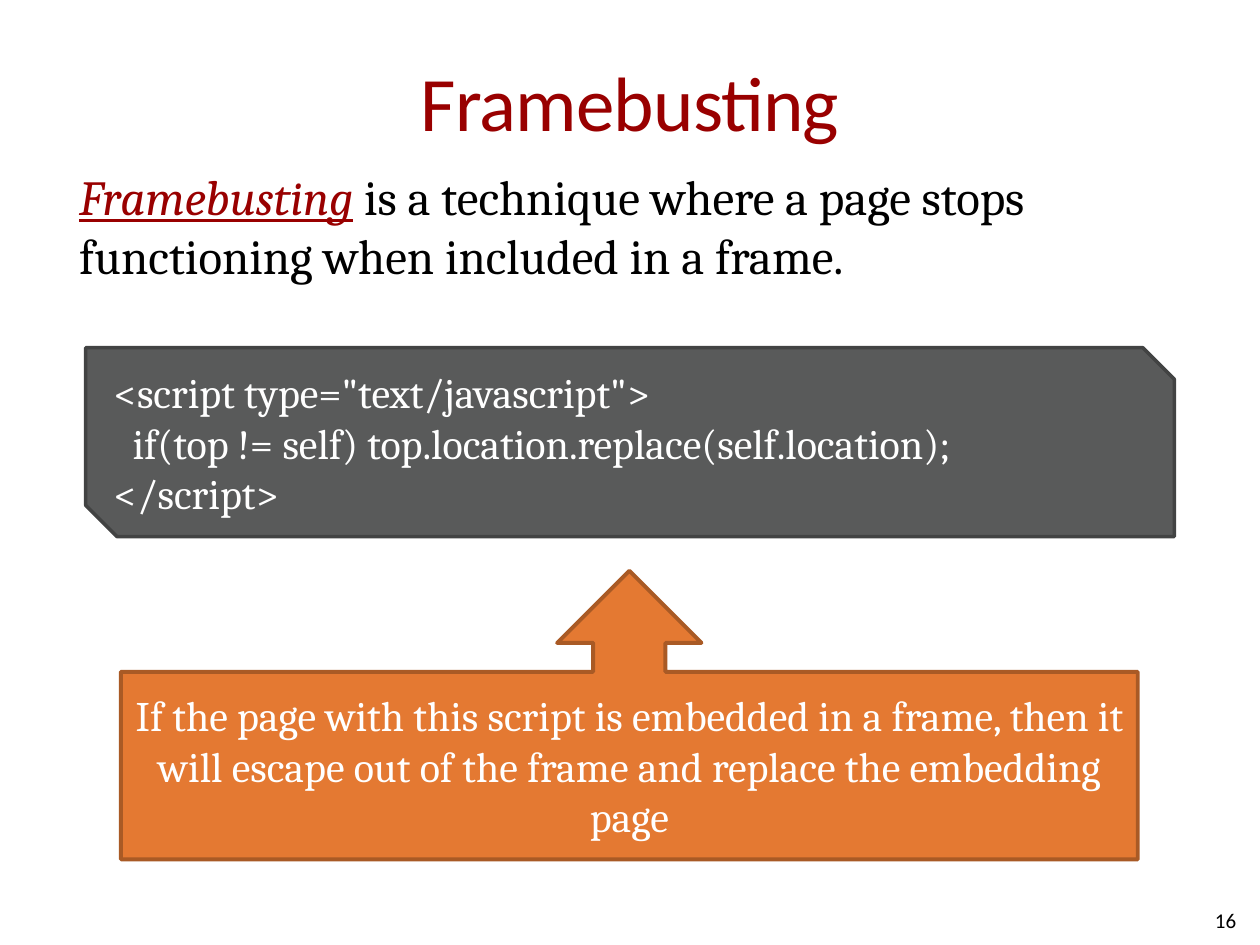
from dataclasses import dataclass

from pptx import Presentation
from pptx.dml.color import RGBColor
from pptx.enum import shapes, text
from pptx.util import Inches, Pt

CRIMSON = RGBColor(0x99, 0x00, 0x00)
BLACK = RGBColor(0x00, 0x00, 0x00)
WHITE = RGBColor(0xFF, 0xFF, 0xFF)
GRAY = RGBColor(0x59, 0x5A, 0x5A)
DARK_GRAY = RGBColor(0x42, 0x43, 0x43)
ORANGE = RGBColor(0xE4, 0x79, 0x32)
DARK_ORANGE = RGBColor(0xA9, 0x5A, 0x25)

LEFT, CENTER, RIGHT = text.PP_ALIGN.LEFT, text.PP_ALIGN.CENTER, text.PP_ALIGN.RIGHT
MIDDLE, TOP = text.MSO_ANCHOR.MIDDLE, text.MSO_ANCHOR.TOP


@dataclass(frozen=True)
class Style:
    font: str
    size: float
    color: RGBColor
    align: text.PP_ALIGN = LEFT


@dataclass(frozen=True)
class Area:
    left: float
    top: float
    width: float
    height: float

    def lengths(self) -> list:
        return [Inches(n) for n in (self.left, self.top, self.width, self.height)]


@dataclass(frozen=True)
class Panel:
    preset: shapes.MSO_SHAPE
    area: Area
    fill: RGBColor
    line: RGBColor
    line_width: float
    style: Style
    lines: tuple[str, ...]
    wrap: bool = True


def write_lines(frame, lines: tuple[str, ...], style: Style) -> None:
    for index, line in enumerate(lines):
        para = frame.paragraphs[0] if index == 0 else frame.add_paragraph()
        para.text = line
        para.alignment = style.align
        para.font.name = style.font
        para.font.size = Pt(style.size)
        para.font.color.rgb = style.color


def add_text(page, area: Area, line: str, style: Style, anchor=MIDDLE):
    frame = page.shapes.add_textbox(*area.lengths()).text_frame
    frame.word_wrap = True
    frame.vertical_anchor = anchor
    write_lines(frame, (line,), style)
    return frame


def add_panel(page, panel: Panel):
    box = page.shapes.add_shape(panel.preset, *panel.area.lengths())
    box.shadow.inherit = False
    box.fill.solid()
    box.fill.fore_color.rgb = panel.fill
    box.line.color.rgb = panel.line
    box.line.width = Pt(panel.line_width)
    frame = box.text_frame
    frame.word_wrap = panel.wrap
    frame.vertical_anchor = MIDDLE
    write_lines(frame, panel.lines, panel.style)
    return frame


def main() -> None:
    deck = Presentation()
    deck.slide_width, deck.slide_height = Inches(10), Inches(7.5)
    page = deck.slides.add_slide(deck.slide_layouts[6])

    title = add_text(page, Area(0.5, 0.17, 9, 1.25), "Framebusting",
                     Style("Calibri", 44, CRIMSON, CENTER))
    title.margin_left = title.margin_right = 0
    title.paragraphs[0].runs[0].font._element.set("spc", "-50")

    add_text(page, Area(7.58, 7.1, 2.33, 0.4), "16", Style("Calibri", 12, BLACK, RIGHT))

    definition = add_text(page, Area(0.53, 1.27, 8.97, 1.04), "Framebusting",
                          Style("Cambria", 28, BLACK), TOP)
    para = definition.paragraphs[0]
    term = para.runs[0].font
    term.italic = term.underline = True
    term.color.rgb = CRIMSON
    span = para.add_run()
    span.text = " is a technique where a page stops functioning when included in a frame."

    code = add_panel(page, Panel(
        shapes.MSO_SHAPE.SNIP_2_DIAG_RECTANGLE, Area(0.68, 2.76, 8.64, 1.5),
        GRAY, DARK_GRAY, 2, Style("Cambria", 24, WHITE),
        ('<script type="text/javascript">',
         "if(top != self) top.location.replace(self.location);",
         "</script>"),
        wrap=False))
    code.paragraphs[1]._p.get_or_add_pPr().set("marL", str(Inches(0.15)))

    add_panel(page, Panel(
        shapes.MSO_SHAPE.UP_ARROW_CALLOUT, Area(0.96, 4.53, 8.07, 2.29),
        ORANGE, DARK_ORANGE, 2.25, Style("Cambria", 24, WHITE, CENTER),
        ("If the page with this script is embedded in a frame, then it will "
         "escape out of the frame and replace the embedding page",)))

    deck.save("out.pptx")


if __name__ == "__main__":
    main()
